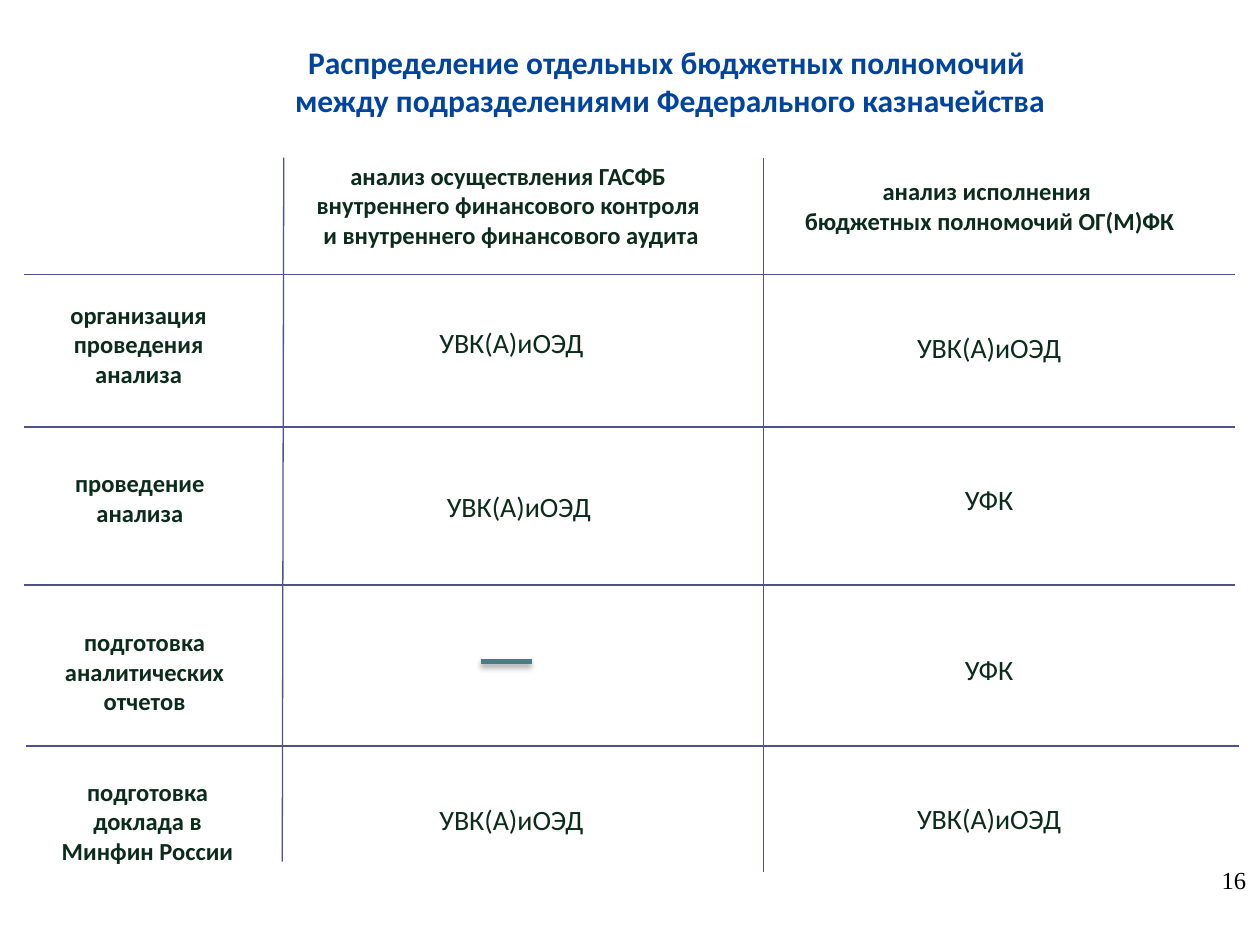
import pptx
import pptx.dml.color
import pptx.enum.shapes
import pptx.enum.text
import pptx.oxml
import pptx.oxml.ns
import pptx.util

Cm = pptx.util.Cm
Pt = pptx.util.Pt
ALIGN = pptx.enum.text.PP_ALIGN

COLORS = {
    "title": "00449E",
    "text": "0B2B1C",
    "grid": "505188",
    "dash": "438086",
    "number": "000000",
}

# Column headers and row labels: text, left, top, width, height in cm.
# "\v" is a line break, "\n" starts a new paragraph.
HEADINGS = [
    ("анализ осуществления ГАСФБ \vвнутреннего финансового контроля \v"
     "и внутреннего финансового аудита", 6.1, 3.12, 8.41, 2.06),
    ("анализ исполнения \nбюджетных полномочий ОГ(М)ФК", 15.39, 3.43, 9.12, 1.45),
    ("организация проведения анализа", 0.89, 5.92, 3.81, 2.06),
    ("проведение анализа", 1.22, 9.32, 3.2, 1.45),
    ("подготовка аналитических отчетов", 0.97, 12.52, 3.89, 2.06),
    ("подготовка доклада в Минфин России", 0.89, 15.54, 4.17, 2.06),
]

# Cell values: text, left, top, width in cm
ANALYSIS_UNIT = "УВК(А)иОЭД"
TREASURY_UNIT = "УФК"
VALUES = [
    (ANALYSIS_UNIT, 8.33, 6.43, 3.96),
    (ANALYSIS_UNIT, 17.96, 6.53, 3.96),
    (ANALYSIS_UNIT, 8.48, 9.75, 3.96),
    (TREASURY_UNIT, 18.14, 9.6, 3.6),
    (TREASURY_UNIT, 18.14, 13.03, 3.6),
    (ANALYSIS_UNIT, 8.33, 16.05, 3.96),
    (ANALYSIS_UNIT, 17.96, 16.03, 3.96),
]

# Grid lines: start x, start y, end x, end y in cm
GRID_LINES = [
    (5.72, 3.18, 5.69, 17.37),
    (15.39, 3.18, 15.39, 17.58),
    *((0.48, y, 24.89, y) for y in (5.54, 8.61, 11.79)),
    (0.53, 15.04, 24.97, 15.04),
]


def rgb(name):
    return pptx.dml.color.RGBColor.from_string(COLORS[name])


def fill_text(shape, text, size, color, bold=False, align=ALIGN.CENTER, font="Calibri"):
    frame = shape.text_frame
    frame.word_wrap = True
    frame.auto_size = pptx.enum.text.MSO_AUTO_SIZE.NONE
    frame.vertical_anchor = pptx.enum.text.MSO_ANCHOR.TOP
    frame.text = text
    for paragraph in frame.paragraphs:
        paragraph.alignment = align
        paragraph.font.name = font
        paragraph.font.size = Pt(size)
        paragraph.font.bold = bold
        paragraph.font.color.rgb = rgb(color)


def add_title(slide, text):
    title = slide.shapes.title
    title.left, title.top, title.width, title.height = Cm(3.91), Cm(0.74), Cm(19.2), Cm(1.8)
    fill_text(title, text, 18, "title", bold=True)


def add_text(slide, text, left, top, width, height, size, color="text", **style):
    box = slide.shapes.add_textbox(Cm(left), Cm(top), Cm(width), Cm(height))
    fill_text(box, text, size, color, **style)


def add_line(slide, start_x, start_y, end_x, end_y, color="grid", weight=0.75):
    """Draw a straight line and return its effect list, empty for no shadow."""
    line = slide.shapes.add_connector(
        pptx.enum.shapes.MSO_CONNECTOR.STRAIGHT,
        Cm(start_x), Cm(start_y), Cm(end_x), Cm(end_y))
    line.line.color.rgb = rgb(color)
    line.line.width = Pt(weight)
    effects = pptx.oxml.parse_xml(f"<a:effectLst {pptx.oxml.ns.nsdecls('a')}/>")
    line._element.spPr.append(effects)
    return effects


def add_shadow(effects):
    effects.append(pptx.oxml.parse_xml(
        f'<a:outerShdw {pptx.oxml.ns.nsdecls("a")} blurRad="40000" dist="23000"'
        ' dir="5400000" rotWithShape="0">'
        '<a:srgbClr val="000000"><a:alpha val="35000"/></a:srgbClr></a:outerShdw>'))


def main():
    presentation = pptx.Presentation()
    presentation.slide_width, presentation.slide_height = Cm(25.4), Cm(19.05)
    slide = presentation.slides.add_slide(presentation.slide_layouts[5])

    add_title(slide, "Распределение отдельных бюджетных полномочий \n"
                     "между подразделениями Федерального казначейства")

    # Grid
    for ends in GRID_LINES:
        add_line(slide, *ends)

    # Headings and cell values
    for heading in HEADINGS:
        add_text(slide, *heading, size=14, bold=True)
    for value in VALUES:
        add_text(slide, *value, height=0.94, size=16)

    # Dash in the empty cell
    add_shadow(add_line(slide, 9.7, 13.34, 10.72, 13.34, color="dash", weight=3))

    # Page number
    add_text(slide, "16", 24.18, 17.32, 1.19, 1.32, size=14, color="number",
             align=ALIGN.RIGHT, font="Times New Roman")

    presentation.save("out.pptx")


if __name__ == "__main__":
    main()
